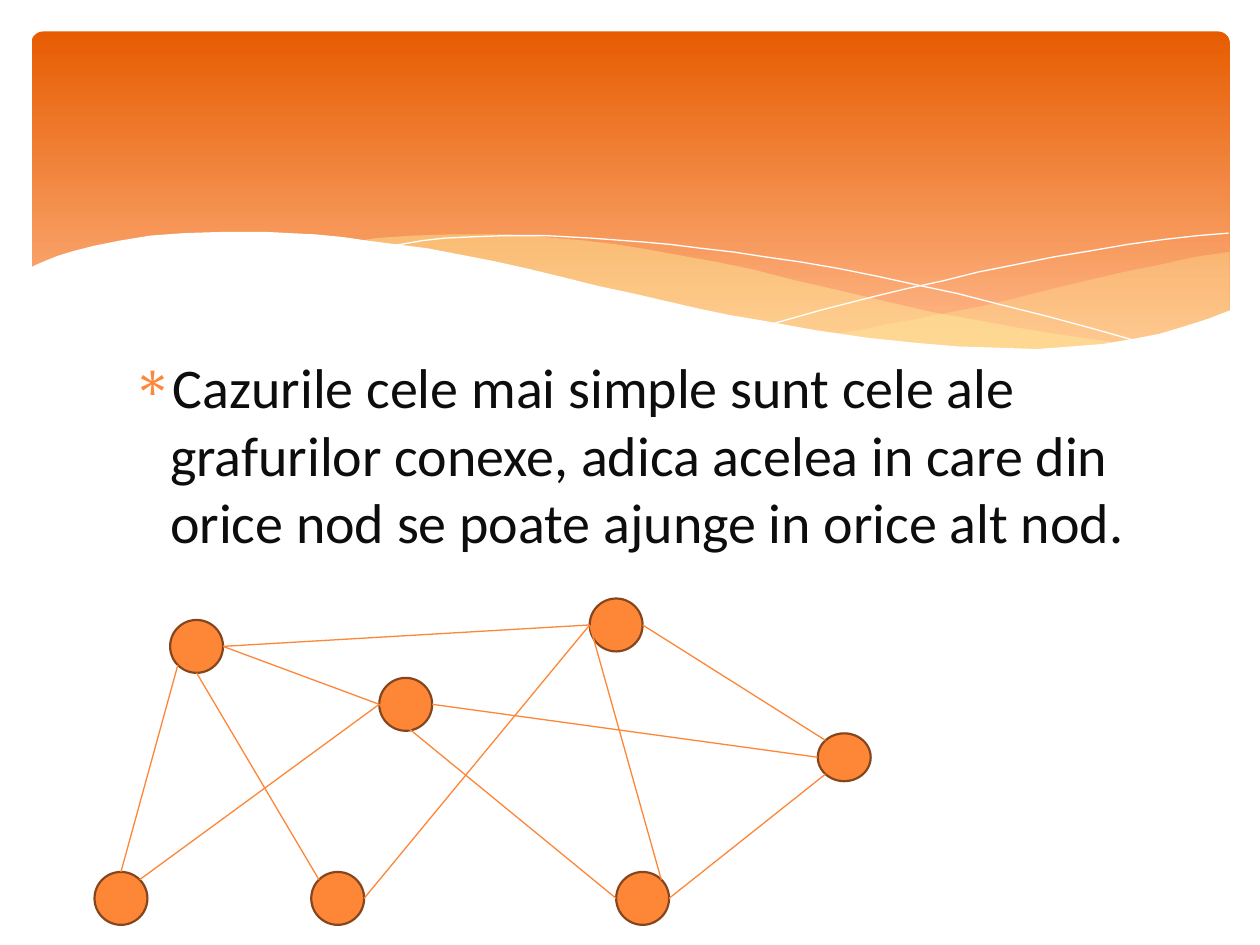
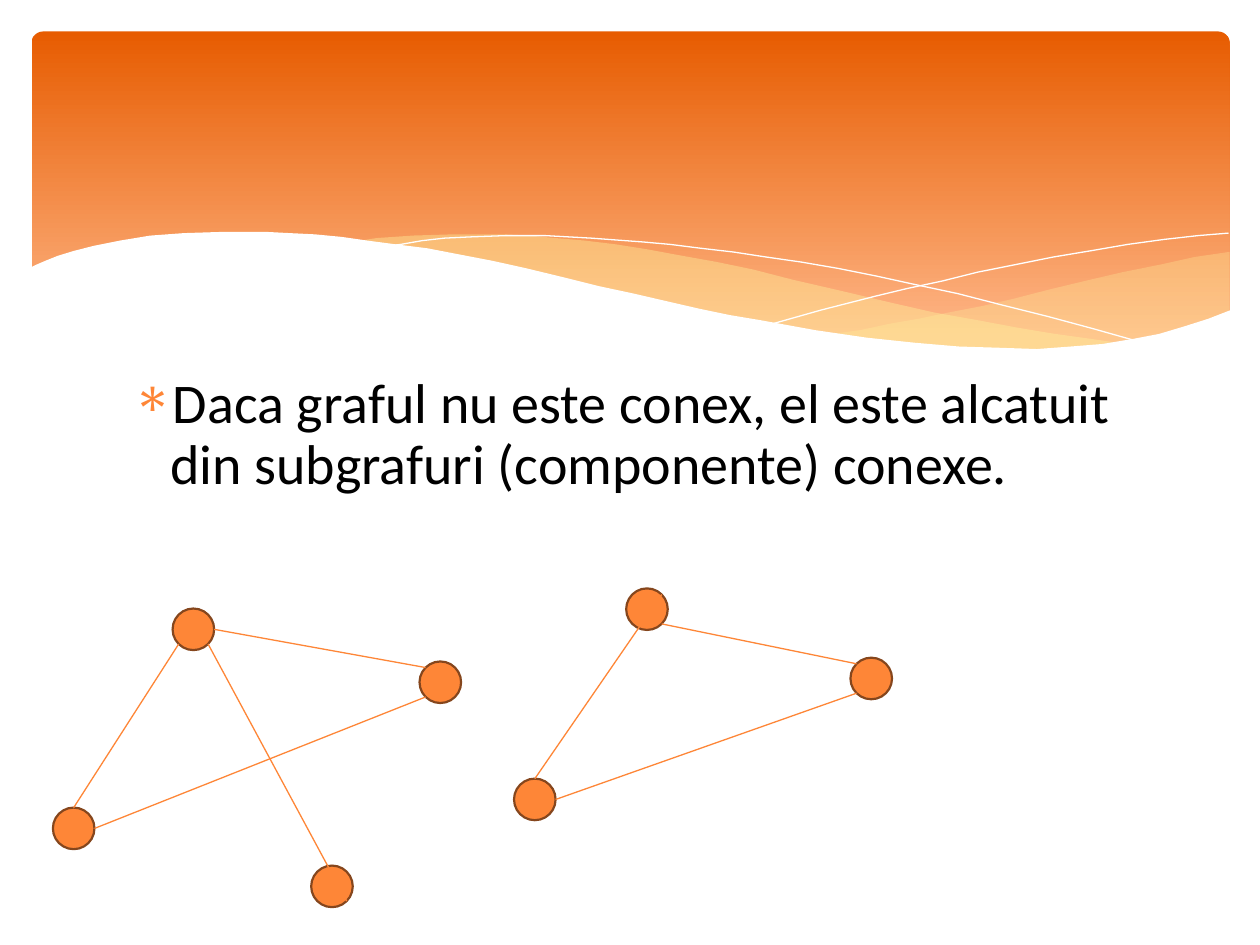
"""Build two slides on connected graphs under a shared orange wave banner."""
from math import cos, radians, sin

from lxml import etree
from pptx import Presentation
from pptx.dml.color import RGBColor
from pptx.enum.shapes import MSO_CONNECTOR, MSO_SHAPE
from pptx.enum.text import MSO_ANCHOR, MSO_AUTO_SIZE
from pptx.oxml.ns import qn
from pptx.util import Inches, Pt

STRAIGHT = MSO_CONNECTOR.STRAIGHT
OVAL = MSO_SHAPE.OVAL
ROUNDED = MSO_SHAPE.ROUNDED_RECTANGLE
TOP = MSO_ANCHOR.TOP
NO_FIT = MSO_AUTO_SIZE.NONE

CELL = Inches(0.01)
COLS, ROWS = 1000, 750
ORANGE, BROWN, YELLOW, WHITE = "FE8637", "85461D", "FFF39D", "FFFFFF"
BANNER_STOPS = [(0, "E75C01"), (0.9, "FEB687")]
COMPASS = ["e", "se", "s", "sw", "w", "nw", "n", "ne"]

RIGHT_SWELL = [
    (975, 200), (948, 204), (921, 210), (891, 216), (861, 223), (832, 230),
    (805, 237), (779, 243), (753, 248), (729, 253), (706, 257), (683, 262),
    (661, 265), (691, 269), (718, 273), (745, 275), (769, 277), (803, 278),
    (835, 277), (863, 275), (889, 272), (913, 267), (935, 262), (949, 257),
    (963, 252), (976, 247), (976, 200)]
LONG_SWELL = [
    (893, 273), (866, 269), (837, 265), (807, 260), (775, 254), (741, 248),
    (706, 240), (668, 231), (629, 222), (598, 214), (569, 208), (541, 203),
    (514, 198), (489, 194), (464, 191), (441, 189), (420, 187), (399, 186),
    (361, 186), (328, 187), (299, 189), (286, 191), (323, 196), (362, 203),
    (404, 211), (449, 222), (491, 232), (530, 240), (566, 248), (601, 255),
    (634, 261), (665, 266), (695, 270), (722, 274), (748, 276), (773, 278),
    (807, 279), (838, 278), (867, 276), (893, 273)]
FALLING_CREST = [
    (309, 195), (318, 194), (335, 191), (353, 189), (374, 188), (401, 187),
    (433, 187), (469, 189), (510, 192), (532, 194), (556, 197), (582, 200),
    (608, 204), (636, 208), (665, 213), (695, 219), (727, 226), (760, 233),
    (795, 242), (831, 251), (868, 261), (907, 272)]
RISING_CREST = [
    (613, 257), (652, 246), (695, 235), (720, 229), (748, 223), (776, 216),
    (806, 210), (836, 204), (866, 199), (895, 194), (924, 190), (951, 187),
    (975, 185)]
PAPER_EDGE = [
    (977, 246), (959, 253), (940, 259), (920, 265), (899, 269), (875, 273),
    (850, 275), (823, 277), (793, 276), (761, 275), (726, 272), (688, 268),
    (647, 262), (603, 254), (579, 250), (555, 245), (529, 239), (503, 233),
    (475, 227), (447, 220), (418, 213), (391, 207), (365, 202), (339, 197),
    (315, 194), (292, 191), (271, 188), (250, 186), (230, 185), (211, 184),
    (177, 184), (146, 185), (119, 187), (95, 191), (75, 195), (59, 199),
    (46, 203), (36, 207), (29, 210), (23, 213), (23, 329), (977, 329)]

WAVES = [
    dict(points=RIGHT_SWELL, fill=YELLOW, alpha=29),
    dict(points=LONG_SWELL, fill=YELLOW, alpha=40),
    dict(points=FALLING_CREST, line=WHITE),
    dict(points=RISING_CREST, line=WHITE),
    dict(points=PAPER_EDGE, fill=WHITE, alpha=100),
]

GRAPHS = [
    dict(
        text="Cazurile cele mai simple sunt cele ale grafurilor conexe, "
             "adica acelea in care din orice nod se poate ajunge in orice "
             "alt nod.",
        top=275, color="0D0D0D", spacing=1.0, size=42,
        nodes=dict(A=(135, 492), B=(75, 692), C=(301, 538), D=(247, 692),
                   E=(468, 475), F=(649, 582, 38), G=(489, 692)),
        edges=["A.s D.nw", "B.ne C.w", "A.sw B.n", "A.e C.w", "E.w G.ne",
               "E.e F.nw", "G.e F.sw", "D.e E.w", "C.w G.w", "E.w A.e",
               "C.e F.w"]),
    dict(
        text="Daca graful nu este conex, el este alcatuit din subgrafuri "
             "(componente) conexe.",
        top=293, color="000000", spacing=0.9, size=33,
        nodes=dict(A=(137, 483), B=(42, 641), C=(333, 525), D=(247, 687),
                   E=(497, 467), F=(408, 618), G=(675, 522)),
        edges=["A.sw B.n", "A.e C.nw", "A.se D.se", "F.n E.ne", "E.se G.nw",
               "B.e C.sw", "F.e G.sw"]),
]


def rgb(color):
    return RGBColor.from_string(color)


def write(sp, text, font="Calibri", size=32, color="000000", spacing=1.0,
          bullet="∗", bullet_color=ORANGE, indent=30):
    tf = sp.text_frame
    tf.word_wrap = True
    tf.auto_size = NO_FIT
    tf.vertical_anchor = TOP
    p = tf.paragraphs[0]
    p.line_spacing = spacing
    r = p.add_run()
    r.text = text
    r.font.name = font
    r.font.size = Pt(size)
    r.font.color.rgb = rgb(color)
    pPr = p._p.get_or_add_pPr()
    pPr.set("marL", str(indent * CELL))
    pPr.set("indent", str(-indent * CELL))
    buClr = etree.SubElement(pPr, qn("a:buClr"))
    etree.SubElement(buClr, qn("a:srgbClr"), val=bullet_color)
    etree.SubElement(pPr, qn("a:buFont"), typeface="Symbol")
    etree.SubElement(pPr, qn("a:buChar"), char=bullet)


prs = Presentation()
prs.slide_width, prs.slide_height = COLS * CELL, ROWS * CELL
layout = prs.slide_layouts[1]
slides = [prs.slides.add_slide(layout) for _ in GRAPHS]

# The banner is drawn once and handed to the layout behind its placeholders.
shapes = slides[0].shapes
banner = shapes.add_shape(ROUNDED, 25 * CELL, 25 * CELL, 951 * CELL, 270 * CELL)
banner.adjustments[0] = 0.034
banner.fill.gradient()
banner.fill.gradient_angle = 270
for stop, (position, color) in zip(banner.fill.gradient_stops, BANNER_STOPS):
    stop.position = position
    stop.color.rgb = rgb(color)
banner.line.fill.background()
backdrop = [banner]

for wave in WAVES:
    start, *rest = wave["points"]
    builder = shapes.build_freeform(*start, scale=CELL)
    builder.add_line_segments(rest, close="fill" in wave)
    sp = builder.convert_to_shape()
    if "fill" in wave:
        sp.line.fill.background()
        sp.fill.solid()
        sp.fill.fore_color.rgb = rgb(wave["fill"])
        clr = sp.element.xpath(".//a:solidFill/a:srgbClr")[0]
        etree.SubElement(clr, qn("a:alpha"), val=str(wave["alpha"] * 1000))
    else:
        sp.fill.background()
        sp.line.color.rgb = rgb(wave["line"])
        sp.line.width = Pt(0)
    backdrop.append(sp)

for i, sp in enumerate(backdrop):
    sp.shadow.inherit = False
    sp.element.xpath(".//p:cNvPr")[0].set("id", str(101 + i))
    layout.shapes.element.insert(2 + i, sp.element)

for s, graph in zip(slides, GRAPHS):
    title = s.shapes.title.element
    title.getparent().remove(title)
    body = s.placeholders[1]
    body.left, body.top = 95 * CELL, graph["top"] * CELL
    body.width, body.height = 810 * CELL, (670 - graph["top"]) * CELL
    write(body, graph["text"], color=graph["color"], spacing=graph["spacing"])

    sites = {}
    for name, (left, top, *flat) in graph["nodes"].items():
        width = graph["size"]
        height = flat[0] if flat else width
        sp = s.shapes.add_shape(OVAL, left * CELL, top * CELL,
                                width * CELL, height * CELL)
        sp.shadow.inherit = False
        sp.fill.solid()
        sp.fill.fore_color.rgb = rgb(ORANGE)
        sp.line.color.rgb = rgb(BROWN)
        sp.line.width = Pt(1.25)
        for i, point in enumerate(COMPASS):
            angle = radians(45 * i)
            x = left + width / 2 * (1 + cos(angle))
            y = top + height / 2 * (1 + sin(angle))
            sites[f"{name}.{point}"] = round(x * CELL), round(y * CELL)

    for edge in graph["edges"]:
        begin, end = edge.split()
        line = s.shapes.add_connector(STRAIGHT, *sites[begin], *sites[end])
        line.line.color.rgb = rgb(ORANGE)
        line.line.width = Pt(0.75)
        etree.SubElement(line.element.spPr, qn("a:effectLst"))

prs.save("out.pptx")
